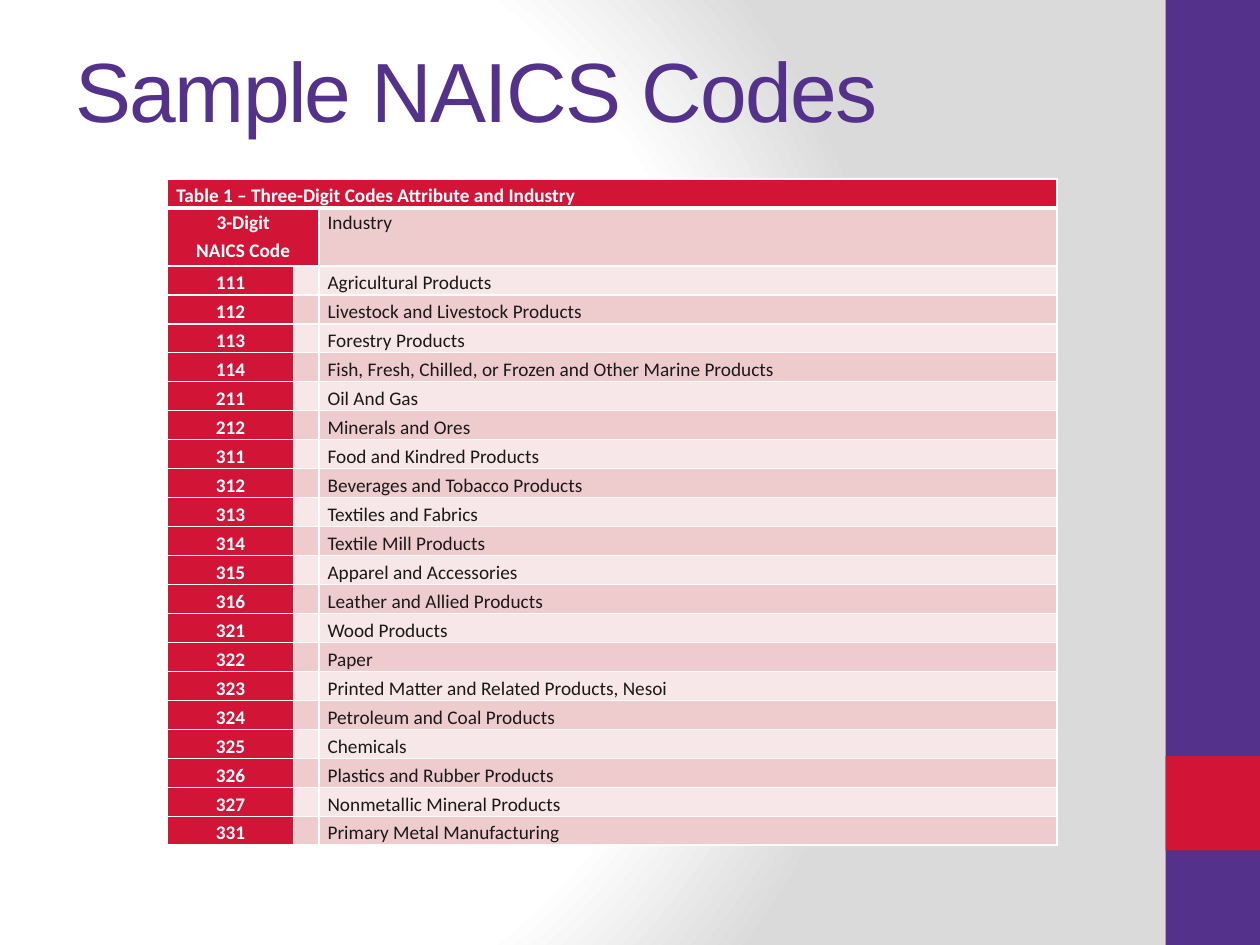
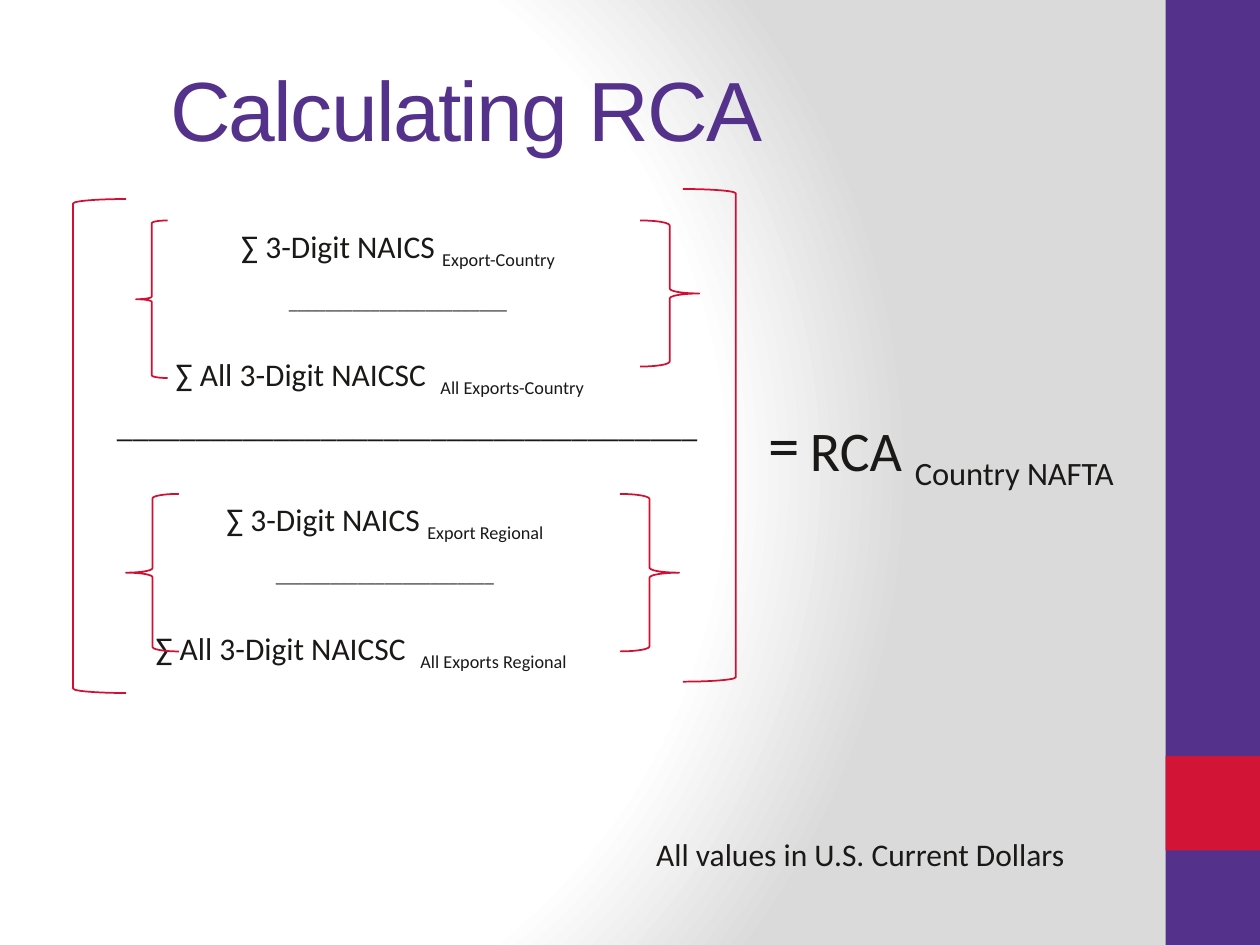
from lxml import etree
from pptx import Presentation
from pptx.dml.color import RGBColor
from pptx.enum.shapes import MSO_SHAPE
from pptx.enum.text import MSO_ANCHOR, MSO_AUTO_SIZE, PP_ALIGN
from pptx.oxml import parse_xml
from pptx.oxml.ns import nsdecls, qn
from pptx.util import Inches, Pt

PURPLE, RED, BRACKET_RED = "54318A", "D21436", "D20F32"
INK, WHITE = "1A1918", "FFFFFF"
ROW_TINTS = ("EECCCE", "F7E7E8")
TITLE_FONT, BODY_FONT = "Arial", "Calibri"

BACKGROUND_STOPS = [(0, WHITE), (75, WHITE), (100, "DADADA")]
BANDS = [((9.25, 0, 0.75, 7.5), PURPLE), ((9.25, 6, 0.75, 0.75), RED)]

CODES_TITLE = ("Sample NAICS Codes", (0.5, 0.08, 8.33, 1.25))
CODES_CAPTION = "Table 1 – Three-Digit Codes Attribute and Industry"
CODES_HEADINGS = ("3-Digit\nNAICS Code", "Industry")
INDUSTRIES = [
    ("111", "Agricultural Products"),
    ("112", "Livestock and Livestock Products"),
    ("113", "Forestry Products"),
    ("114", "Fish, Fresh, Chilled, or Frozen and Other Marine Products"),
    ("211", "Oil And Gas"),
    ("212", "Minerals and Ores"),
    ("311", "Food and Kindred Products"),
    ("312", "Beverages and Tobacco Products"),
    ("313", "Textiles and Fabrics"),
    ("314", "Textile Mill Products"),
    ("315", "Apparel and Accessories"),
    ("316", "Leather and Allied Products"),
    ("321", "Wood Products"),
    ("322", "Paper"),
    ("323", "Printed Matter and Related Products, Nesoi"),
    ("324", "Petroleum and Coal Products"),
    ("325", "Chemicals"),
    ("326", "Plastics and Rubber Products"),
    ("327", "Nonmetallic Mineral Products"),
    ("331", "Primary Metal Manufacturing"),
]
TABLE_LEFT, TABLE_TOP = 1.33, 1.42
COLUMN_WIDTHS = (1, 0.2, 5.86)
ROW_HEIGHT = 0.23

RCA_TITLE = ("Calculating RCA", (1.25, 0.3, 6.42, 1.12))
# Each fraction: box, subscript above the bar, subscript below it
FRACTIONS = [
    ((1.24, 1.75, 3.84, 1.41), "Export-Country", "All Exports-Country"),
    ((1.08, 3.92, 3.95, 1.41), "Export Regional", "All Exports Regional"),
]
# Each label: box, size, wraps, text, subscript
LABELS = [
    ((0.83, 3.17, 4.87, 0.4), 18, False, "_" * 37, ""),
    ((6, 3.17, 0.5, 0.71), 36, False, "=", ""),
    ((6.33, 3.25, 2.92, 0.64), 32, True, "RCA ", "Country NAFTA"),
    ((5.11, 6.58, 3.61, 0.4), 18, False, "All values in U.S. Current Dollars", ""),
]
BRACKETS = [
    (MSO_SHAPE.LEFT_BRACKET, (0.58, 1.58, 0.42, 3.92)),
    (MSO_SHAPE.RIGHT_BRACKET, (5.42, 1.5, 0.42, 3.91)),
    (MSO_SHAPE.LEFT_BRACE, (1.08, 1.75, 0.25, 1.25)),
    (MSO_SHAPE.RIGHT_BRACE, (5.08, 1.75, 0.47, 1.16)),
    (MSO_SHAPE.LEFT_BRACE, (1, 3.92, 0.42, 1.25)),
    (MSO_SHAPE.RIGHT_BRACE, (4.92, 3.92, 0.47, 1.25)),
]


def color(hex_code):
    return RGBColor.from_string(hex_code)


def inches(box):
    return [Inches(length) for length in box]


def set_font(font, name, size, hex_code, bold=False):
    font.name, font.size, font.bold = name, Pt(size), bold
    font.color.rgb = color(hex_code)


def add_plain_shape(slide, preset, box):
    shape = slide.shapes.add_shape(preset, *inches(box))
    shape.shadow.inherit = False
    return shape


def set_background(layout):
    stops = "".join(
        f'<a:gs pos="{pos * 1000}"><a:srgbClr val="{tone}"/></a:gs>'
        for pos, tone in BACKGROUND_STOPS
    )
    layout.element.cSld.insert(0, parse_xml(
        f'<p:bg {nsdecls("p", "a")}><p:bgPr><a:gradFill rotWithShape="1">'
        f'<a:gsLst>{stops}</a:gsLst><a:path path="circle">'
        '<a:fillToRect l="20000" t="50000" r="100000" b="50000"/></a:path>'
        '</a:gradFill><a:effectLst/></p:bgPr></p:bg>'
    ))


def move_bands_to_layout(slide, layout):
    """Draw the side bands on the slide, then hand them to its layout."""
    for box, tone in BANDS:
        band = add_plain_shape(slide, MSO_SHAPE.RECTANGLE, box)
        band.fill.solid()
        band.fill.fore_color.rgb = color(tone)
        band.line.fill.background()
        layout.shapes.element.append(band.element)


def add_titled_slide(prs, layout, text, box):
    slide = prs.slides.add_slide(layout)
    title = slide.shapes.title
    title.left, title.top, title.width, title.height = inches(box)
    frame = title.text_frame
    frame.text = text
    frame.auto_size = MSO_AUTO_SIZE.NONE
    frame.vertical_anchor = MSO_ANCHOR.MIDDLE
    heading = frame.paragraphs[0]
    heading.alignment = PP_ALIGN.LEFT
    set_font(heading.font, TITLE_FONT, 48, PURPLE)
    heading.runs[0].font._element.set("spc", "-100")
    return slide


def add_border(cell, side, width):
    line = etree.SubElement(
        cell._tc.get_or_add_tcPr(), qn(f"a:ln{side}"), w=str(Pt(width)))
    fill = etree.SubElement(line, qn("a:solidFill"))
    etree.SubElement(fill, qn("a:srgbClr"), val=WHITE)


def fill_cell(cell, text, tint, align, anchor, top=1, bottom=1):
    """Write and style one cell; top and bottom are border widths."""
    cell.text = text
    cell.margin_left = cell.margin_right = Inches(0.07)
    cell.margin_top = cell.margin_bottom = 0
    cell.vertical_anchor = anchor
    for side, width in zip("LRTB", (1, 1, top, bottom)):
        add_border(cell, side, width)
    cell.fill.solid()
    cell.fill.fore_color.rgb = color(tint)
    strong = tint == RED
    for paragraph in cell.text_frame.paragraphs:
        paragraph.alignment = align
        paragraph.line_spacing = 1.15
        set_font(paragraph.font, BODY_FONT, 11, WHITE if strong else INK, strong)
        if not text:
            etree.SubElement(paragraph._p, qn("a:endParaRPr"), sz="1100")


def add_codes_table(slide):
    code_heading, industry_heading = CODES_HEADINGS
    rows = [(CODES_CAPTION, "", ""), (code_heading, "", industry_heading)]
    rows += [(code, "", industry) for code, industry in INDUSTRIES]
    heights = [ROW_HEIGHT, 2 * ROW_HEIGHT] + [ROW_HEIGHT] * len(INDUSTRIES)
    table = slide.shapes.add_table(
        len(rows), len(COLUMN_WIDTHS),
        *inches((TABLE_LEFT, TABLE_TOP, sum(COLUMN_WIDTHS), sum(heights))),
    ).table
    for column, width in zip(table.columns, COLUMN_WIDTHS):
        column.width = Inches(width)
    aligns = (PP_ALIGN.CENTER, PP_ALIGN.CENTER, PP_ALIGN.JUSTIFY)
    for r, (row, height) in enumerate(zip(rows, heights)):
        table.rows[r].height = Inches(height)
        tint = ROW_TINTS[(r + 1) % 2]
        for c, text in enumerate(row):
            fill_cell(
                table.cell(r, c), text,
                RED if r == 0 or c == 0 else tint,
                PP_ALIGN.JUSTIFY if r == 0 else aligns[c],
                MSO_ANCHOR.TOP if r == 1 else MSO_ANCHOR.BOTTOM,
                top=3 if r == 1 else 1, bottom=3 if r == 0 else 1,
            )
    table.cell(0, 0).merge(table.cell(0, 2))
    table.cell(1, 0).merge(table.cell(1, 1))


def add_text_frame(slide, box, wrap=False):
    frame = slide.shapes.add_textbox(*inches(box)).text_frame
    frame.word_wrap = wrap
    frame.auto_size = MSO_AUTO_SIZE.SHAPE_TO_FIT_TEXT
    return frame


def write_term(paragraph, size, text, subscript):
    set_font(paragraph.font, BODY_FONT, size, INK)
    if text:
        paragraph.add_run().text = text
    if subscript:
        run = paragraph.add_run()
        run.text = subscript
        run.font._element.set("baseline", "-25000")


def add_fraction(slide, box, above, below):
    frame = add_text_frame(slide, box)
    numerator, bar, denominator = (
        frame.paragraphs[0], frame.add_paragraph(), frame.add_paragraph())
    write_term(numerator, 18, "∑ 3-Digit NAICS ", above)
    write_term(bar, 18, "", "_" * 24)
    write_term(denominator, 18, " ∑ All 3-Digit NAICSC  ", below)
    numerator.alignment = bar.alignment = PP_ALIGN.CENTER
    denominator.space_before = Pt(24.5)


def add_formula(slide):
    for fraction in FRACTIONS:
        add_fraction(slide, *fraction)
    for box, size, wrap, text, subscript in LABELS:
        frame = add_text_frame(slide, box, wrap)
        write_term(frame.paragraphs[0], size, text, subscript)
    for preset, box in BRACKETS:
        bracket = add_plain_shape(slide, preset, box)
        bracket.fill.background()
        bracket.line.color.rgb = color(BRACKET_RED)
        bracket.line.width = Pt(1)


def main():
    prs = Presentation()
    prs.slide_width, prs.slide_height = Inches(10), Inches(7.5)
    layout = prs.slide_layouts.get_by_name("Title Only")
    set_background(layout)

    codes = add_titled_slide(prs, layout, *CODES_TITLE)
    move_bands_to_layout(codes, layout)
    add_codes_table(codes)

    rca = add_titled_slide(prs, layout, *RCA_TITLE)
    add_formula(rca)
    prs.save("out.pptx")


if __name__ == "__main__":
    main()
